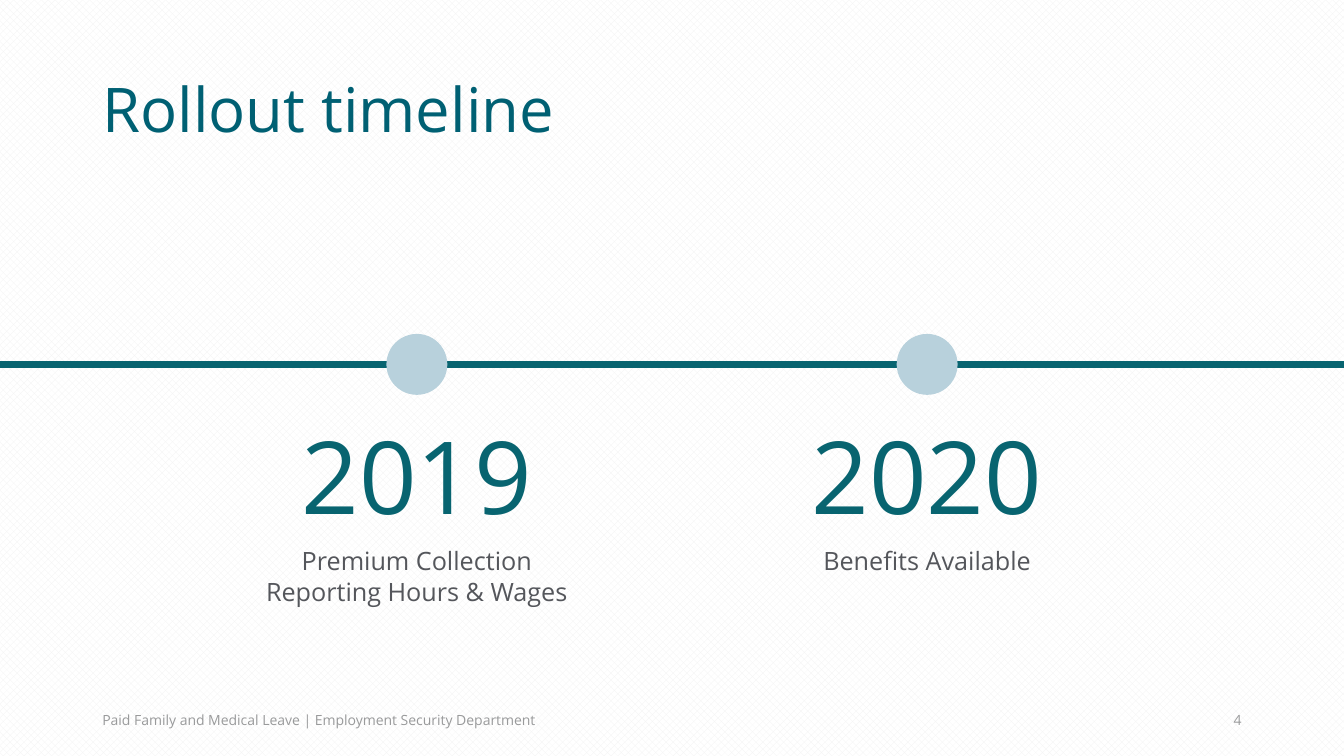
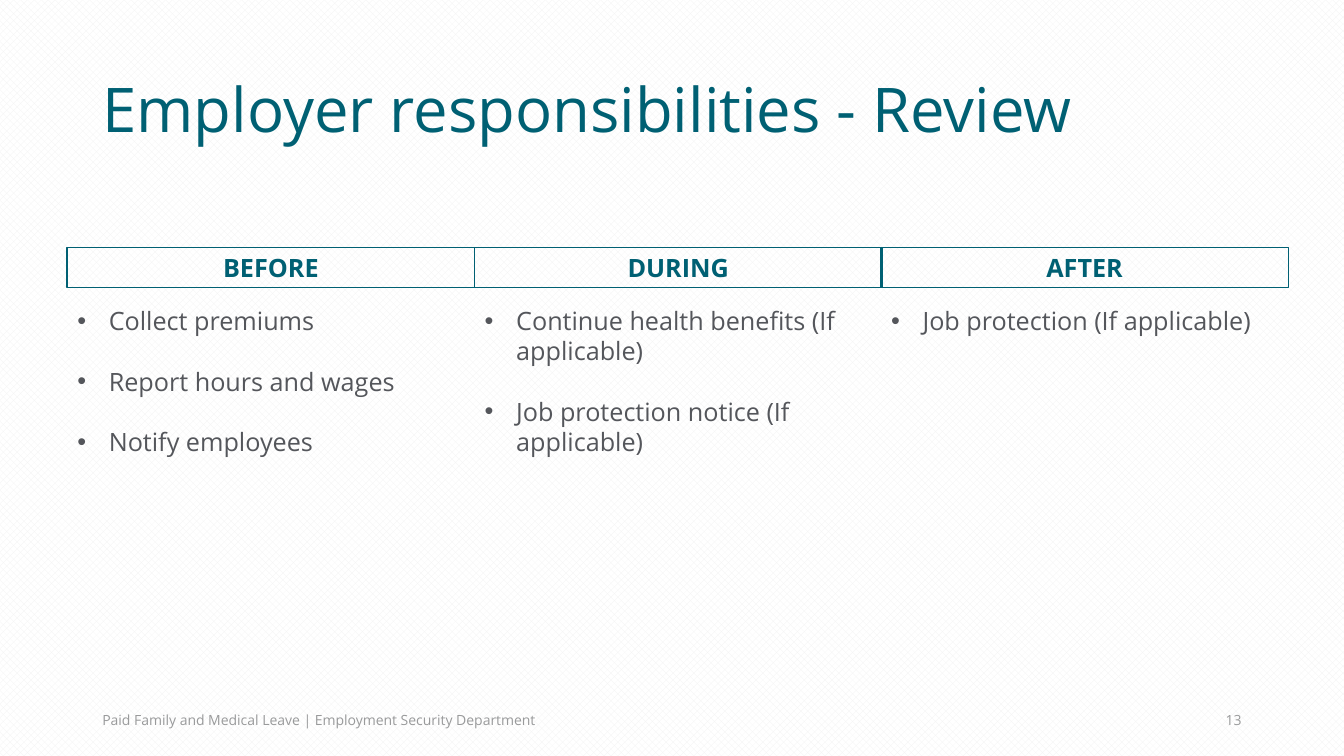
from lxml import etree
from pptx import Presentation
from pptx.dml.color import RGBColor
from pptx.enum.dml import MSO_PATTERN
from pptx.enum.shapes import MSO_CONNECTOR, MSO_SHAPE
from pptx.enum.text import MSO_ANCHOR, MSO_AUTO_SIZE, PP_ALIGN
from pptx.oxml.ns import qn
from pptx.util import Emu, Pt

LEFT, MID, RIGHT = PP_ALIGN.LEFT, PP_ALIGN.CENTER, PP_ALIGN.RIGHT
TOP, CENTER = MSO_ANCHOR.TOP, MSO_ANCHOR.MIDDLE
FIXED = MSO_AUTO_SIZE.NONE
RECT, OVAL = MSO_SHAPE.RECTANGLE, MSO_SHAPE.OVAL
LINE = MSO_CONNECTOR.STRAIGHT
HATCH = MSO_PATTERN.PERCENT_50

SCALE = 9525
WIDTH, HEIGHT = 1280, 720
FONT = "Open Sans"
FOOTER = "Paid Family and Medical Leave | Employment Security Department"
COLORS = {
    "title": "006073",
    "axis": "086470",
    "dot": "B8D1DC",
    "text": "54565B",
    "footer": "999A9B",
    "paper": "FFFFFF",
    "hatch": "F2F2F2",
}


def px(*sizes):
    return [Emu(size * SCALE) for size in sizes]


def rgb(name):
    return RGBColor.from_string(COLORS[name])


def place(shape, box):
    shape.left, shape.top, shape.width, shape.height = px(*box)


def write(shape, text, size, color, align=LEFT, anchor=TOP, bold=False):
    frame = shape.text_frame
    frame.text = text
    frame.word_wrap = True
    frame.auto_size = FIXED
    frame.vertical_anchor = anchor
    for para in frame.paragraphs:
        para.alignment = align
        for run in para.runs:
            font = run.font
            font.name, font.size, font.bold = FONT, Pt(size), bold
            font.color.rgb = rgb(color)


def label(slide, box, *style, **extra):
    write(slide.shapes.add_textbox(*px(*box)), *style, **extra)


def paint(master):
    fill = master.background.fill
    fill.patterned()
    fill.pattern = HATCH
    fill.fore_color.rgb = rgb("hatch")
    fill.back_color.rgb = rgb("paper")


def start(deck, layout, title, number):
    slide = deck.slides.add_slide(deck.slide_layouts.get_by_name(layout))
    head = slide.shapes.title
    place(head, (88, 38, 1104, 139))
    write(head, title, 44, "title", anchor=CENTER)
    head.text_frame.paragraphs[0].line_spacing = 0.9
    label(slide, (88, 667, 768, 38), FOOTER, 10, "footer", anchor=CENTER)
    label(slide, (904, 667, 288, 38), str(number), 10, "footer",
          align=RIGHT, anchor=CENTER)
    return slide


def axis(slide, y):
    line = slide.shapes.add_connector(LINE, *px(0, y, WIDTH, y))
    line.line.color.rgb = rgb("axis")
    line.line.width = Pt(4.5)
    etree.SubElement(line._element.spPr, qn("a:effectLst"))


def stop(slide, x, y, year, text):
    dot = slide.shapes.add_shape(OVAL, *px(x - 29, y - 29, 58, 58))
    dot.shadow.inherit = False
    dot.fill.solid()
    dot.fill.fore_color.rgb = rgb("dot")
    dot.line.fill.background()
    label(slide, (x - 122, y + 42, 244, 126), year, 72, "axis", align=MID)
    label(slide, (x - 164, y + 168, 328, 68), text, 18, "text", align=MID)


def heading(slide, box, text):
    shape = slide.shapes.add_shape(RECT, *px(*box))
    shape.shadow.inherit = False
    shape.fill.background()
    shape.line.color.rgb = rgb("title")
    shape.line.width = Pt(1)
    write(shape, text, 18, "title", align=MID, anchor=CENTER, bold=True)


def bullets(holder, box, items):
    place(holder, box)
    write(holder, "\n".join(items), 18, "text")
    for order, para in enumerate(holder.text_frame.paragraphs):
        para.space_before = Pt(21.6 if order else 0)
        props = para._p.get_or_add_pPr()
        props.set("marL", str(30 * SCALE))
        props.set("indent", str(-30 * SCALE))
        etree.SubElement(props, qn("a:buFont"), typeface="Arial")
        etree.SubElement(props, qn("a:buChar"), char="•")


def columns(slide, box, groups):
    left, top, width, height = box
    wide = width / len(groups)
    bodies = list(slide.placeholders)[1:]
    for order, (name, items) in enumerate(groups):
        x = round(left + order * wide)
        heading(slide, (x, top, round(wide), 38), name)
        bullets(bodies[order], (x, top + 50, round(wide), height - 50), items)
    for spare in bodies[len(groups):]:
        spare._element.getparent().remove(spare._element)


def rollout(deck):
    slide = start(deck, "Title Only", "Rollout timeline", 4)
    y = 347
    axis(slide, y)
    stops = [
        ("2019", "Premium Collection\nReporting Hours & Wages"),
        ("2020", "Benefits Available"),
    ]
    for order, (year, text) in enumerate(stops):
        stop(slide, 397 + order * 486, y, year, text)


def review(deck):
    slide = start(deck, "Comparison", "Employer responsibilities - Review", 13)
    columns(slide, (64, 236, 1163, 234), [
        ("BEFORE", ["Collect premiums", "Report hours and wages",
                    "Notify employees"]),
        ("DURING", ["Continue health benefits (If applicable)",
                    "Job protection notice (If applicable)"]),
        ("AFTER", ["Job protection (If applicable)"]),
    ])


def main():
    deck = Presentation()
    deck.slide_width, deck.slide_height = px(WIDTH, HEIGHT)
    paint(deck.slide_master)
    rollout(deck)
    review(deck)
    deck.save("out.pptx")


if __name__ == "__main__":
    main()
